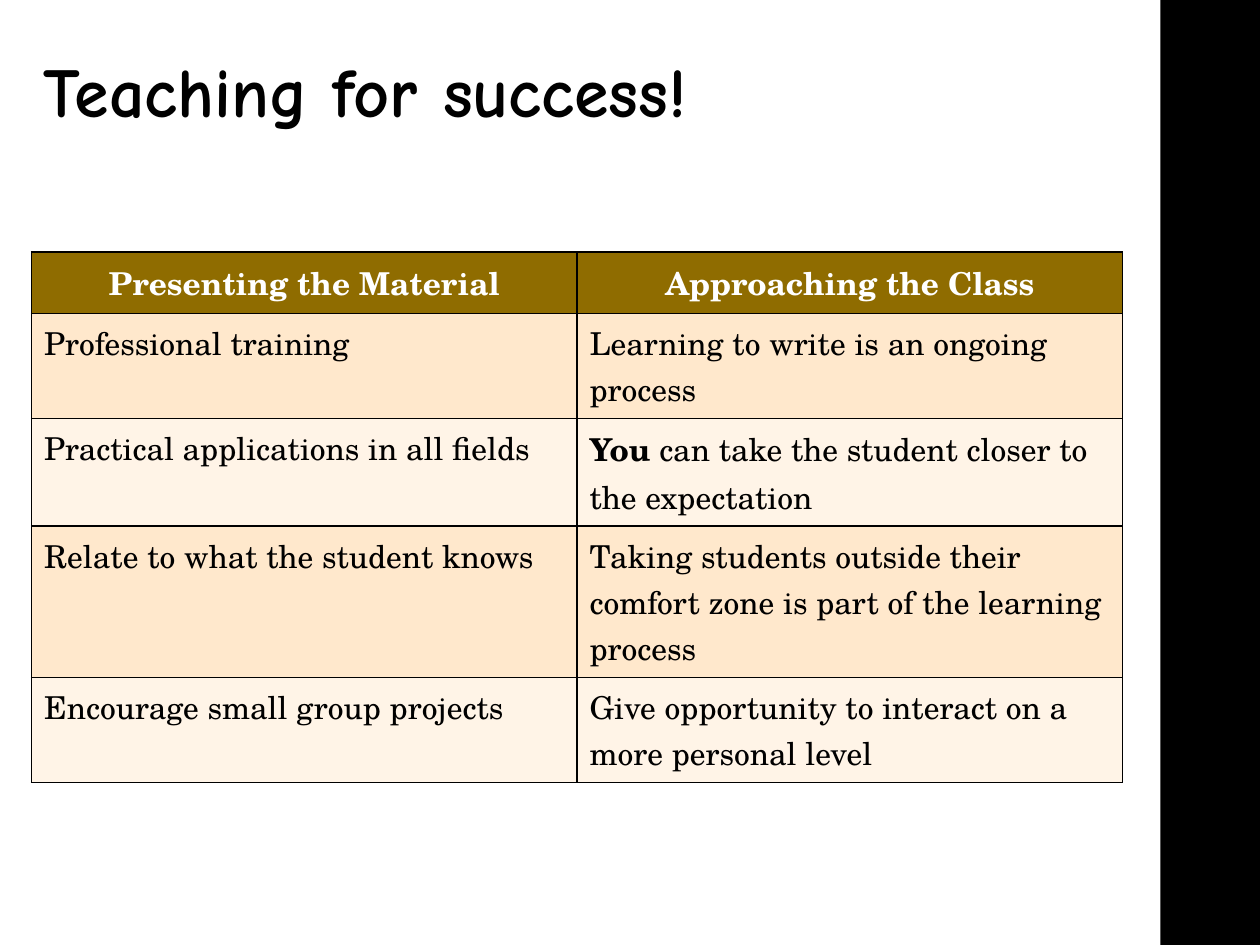
from dataclasses import dataclass

from lxml.etree import SubElement
from pptx import Presentation
from pptx.dml.color import RGBColor
from pptx.enum.shapes import MSO_SHAPE as Shape
from pptx.enum.text import MSO_AUTO_SIZE as AutoSize, PP_ALIGN as Align
from pptx.oxml.ns import qn
from pptx.util import Inches, Pt

BLACK, WHITE = "000000", "FFFFFF"
HEADER_FILL = "8F6C00"
BAND_FILLS = ("FFE8CC", "FFF4E7")
TITLE_FONT, TABLE_FONT = "Comic Neue", "TeX Gyre Schola"


@dataclass
class Words:
    text: str
    bold: bool = False


@dataclass
class Advice:
    material: list[Words]
    approach: list[Words]


HEADINGS = Advice([Words("Presenting the Material", True)],
                  [Words("Approaching the Class", True)])
ADVICE = [
    Advice([Words("Professional training")],
           [Words("Learning to write is an ongoing process")]),
    Advice([Words("Practical applications in all fields")],
           [Words("You", True),
            Words(" can take the student closer to the expectation")]),
    Advice([Words("Relate to what the student knows")],
           [Words("Taking students outside their comfort zone "
                  "is part of the learning process")]),
    Advice([Words("Encourage small group projects")],
           [Words("Give opportunity to interact on a more personal level")]),
]


def color(hex_code: str) -> RGBColor:
    return RGBColor.from_string(hex_code)


def add_words(paragraph, words: Words, font: str, size: int, ink: str) -> None:
    run = paragraph.add_run()
    run.text = words.text
    run.font.name = font
    run.font.size = Pt(size)
    run.font.bold = words.bold
    run.font.color.rgb = color(ink)


def add_borders(cell, ink: str, width: int) -> None:
    properties = cell._tc.get_or_add_tcPr()
    for side in ("a:lnL", "a:lnR", "a:lnT", "a:lnB"):
        line = SubElement(properties, qn(side), w=str(Pt(width)))
        fill = SubElement(line, qn("a:solidFill"))
        SubElement(fill, qn("a:srgbClr"), val=ink)


def fill_cell(cell, content: list[Words], fill: str, ink: str, align: Align) -> None:
    add_borders(cell, BLACK, 1)
    cell.fill.solid()
    cell.fill.fore_color.rgb = color(fill)
    paragraph = cell.text_frame.paragraphs[0]
    paragraph.alignment = align
    for words in content:
        add_words(paragraph, words, TABLE_FONT, 18, ink)


def add_side_bar(slide) -> None:
    bar = slide.shapes.add_shape(Shape.RECTANGLE, Inches(9.21), Inches(0),
                                 Inches(0.8), Inches(7.5))
    bar.shadow.inherit = False
    bar.fill.solid()
    bar.fill.fore_color.rgb = color(BLACK)
    bar.line.fill.background()


def add_advice_table(slide) -> None:
    rows = [HEADINGS, *ADVICE]
    table = slide.shapes.add_table(len(rows), 2, Inches(0.25), Inches(2),
                                   Inches(8.66), Inches(2.11)).table
    for index, advice in enumerate(rows):
        is_header = index == 0
        table.rows[index].height = Inches(0.47 if is_header else 0.41)
        fill = HEADER_FILL if is_header else BAND_FILLS[(index - 1) % 2]
        ink = WHITE if is_header else BLACK
        align = Align.CENTER if is_header else Align.LEFT
        for column, content in enumerate((advice.material, advice.approach)):
            fill_cell(table.cell(index, column), content, fill, ink, align)


def add_title(slide) -> None:
    title = slide.shapes.add_textbox(Inches(0.25), Inches(0.33),
                                     Inches(7.58), Inches(0.77)).text_frame
    title.word_wrap = True
    title.auto_size = AutoSize.SHAPE_TO_FIT_TEXT
    add_words(title.paragraphs[0], Words("Teaching for success!", True),
              TITLE_FONT, 40, BLACK)


def main() -> None:
    deck = Presentation()
    deck.slide_width, deck.slide_height = Inches(10), Inches(7.5)
    slide = deck.slides.add_slide(deck.slide_layouts[6])

    # Black bar along the right edge
    add_side_bar(slide)
    # Two columns of teaching advice
    add_advice_table(slide)
    # Heading
    add_title(slide)

    deck.save("out.pptx")


if __name__ == "__main__":
    main()
